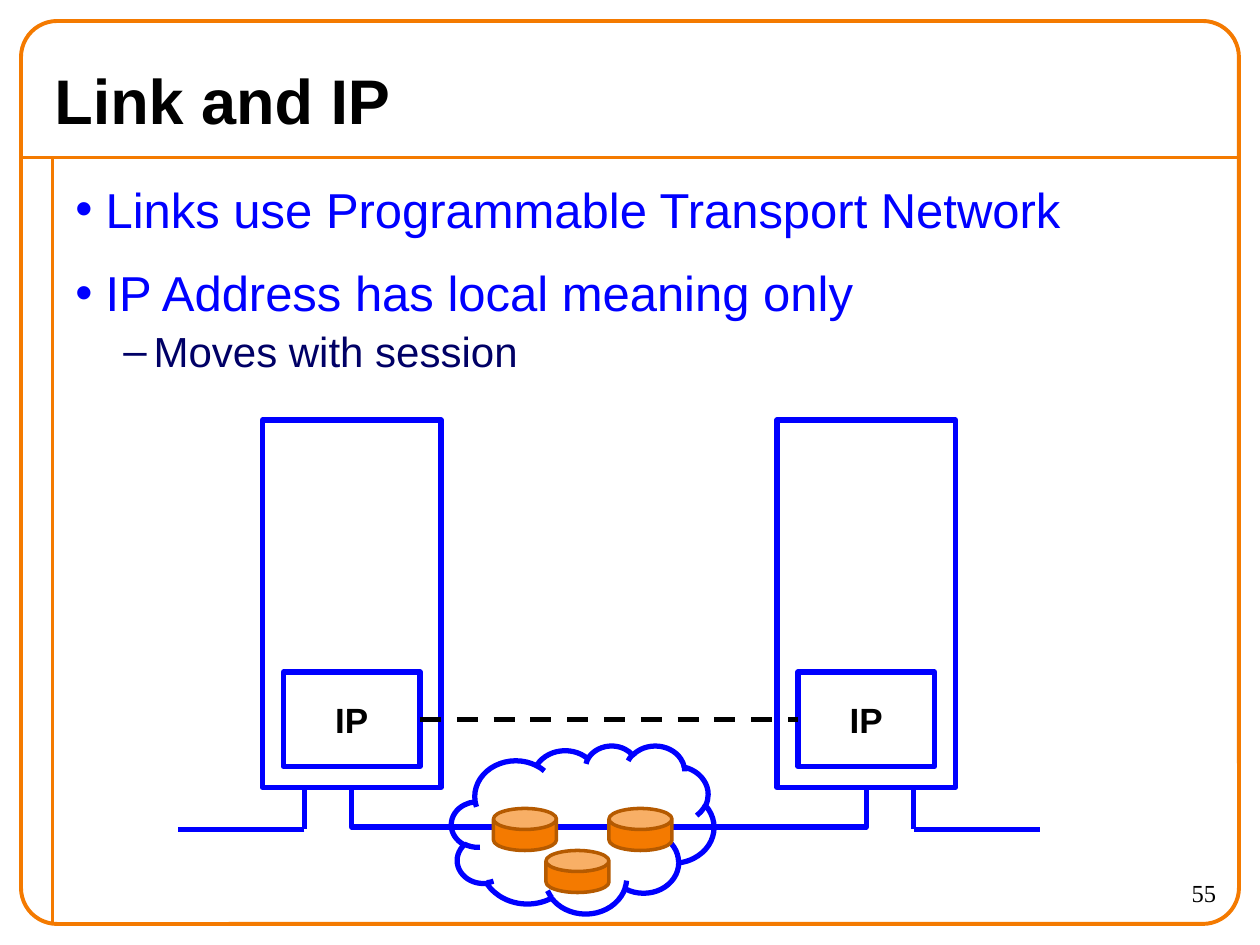
import dataclasses
import typing

import lxml.etree
import pptx
import pptx.dml.color
import pptx.enum.dml
import pptx.enum.shapes
import pptx.enum.text
import pptx.oxml.ns
import pptx.util

HUES = {
    "frame": "F47A00",
    "rim": "B55A00",
    "blue": "0000FF",
    "navy": "000066",
    "black": "000000",
}
COLS, ROWS = 120, 90
KINDS = pptx.enum.shapes.MSO_SHAPE
LINKS = pptx.enum.shapes.MSO_CONNECTOR
ALIGN = pptx.enum.text.PP_ALIGN
ANCHOR = pptx.enum.text.MSO_ANCHOR

deck = pptx.Presentation()
deck.slide_width = pptx.util.Inches(10)
deck.slide_height = pptx.util.Inches(7.5)
slide = deck.slides.add_slide(deck.slide_layouts[6])


@dataclasses.dataclass
class Box:
    col: float
    row: float
    wide: float
    high: float


@dataclasses.dataclass
class Font:
    size: float
    hue: str
    name: str = "Arial"
    bold: bool = False


@dataclasses.dataclass
class Point:
    text: str
    mark: str
    left: float
    gap: float
    level: int
    font: Font


def cell(col: float, row: float) -> tuple[int, int]:
    return int(deck.slide_width * col / COLS), int(deck.slide_height * row / ROWS)


def paint(hue: str) -> pptx.dml.color.RGBColor:
    return pptx.dml.color.RGBColor.from_string(HUES[hue])


def tag(home: typing.Any, label: str, attrs: dict[str, str]) -> typing.Any:
    return lxml.etree.SubElement(home, pptx.oxml.ns.qn(label), attrs)


def style(para: typing.Any, font: Font) -> None:
    for run in para.runs:
        run.font.size = pptx.util.Pt(font.size)
        run.font.name = font.name
        run.font.bold = font.bold
        run.font.color.rgb = paint(font.hue)


def shape(kind: typing.Any, box: Box, hue: str, width: float,
          fill: str = "", adjust: float | None = None) -> typing.Any:
    item = slide.shapes.add_shape(
        kind, *cell(box.col, box.row), *cell(box.wide, box.high))
    item.shadow.inherit = False
    item.line.color.rgb = paint(hue)
    item.line.width = pptx.util.Pt(width)
    if fill:
        item.fill.solid()
        item.fill.fore_color.rgb = paint(fill)
    else:
        item.fill.background()
    if adjust is not None:
        item.adjustments[0] = adjust
    return item


def line(start: tuple[float, float], end: tuple[float, float], hue: str,
         width: float = 3, kind: typing.Any = LINKS.STRAIGHT) -> typing.Any:
    item = slide.shapes.add_connector(kind, *cell(*start), *cell(*end))
    item.line.color.rgb = paint(hue)
    item.line.width = pptx.util.Pt(width)
    tag(item.element.spPr, "a:effectLst", {})
    return item


def elbow(left: float, right: float, row: float, drop: float) -> None:
    thin = 0.02
    mid, half = (left + right) / 2, (right - left) / 2
    item = line((mid + thin / 2, row - half), (mid - thin / 2, row + half),
                "blue", kind=LINKS.ELBOW)
    props = item.element.spPr
    props.find(pptx.oxml.ns.qn("a:xfrm")).set("rot", str(270 * 60000))
    form = props.find(pptx.oxml.ns.qn("a:prstGeom"))
    guides = form.find(pptx.oxml.ns.qn("a:avLst"))
    tag(guides, "a:gd", {"name": "adj1", "fmla": f"val {round(drop / thin * 100000)}"})


def frame(box: Box) -> typing.Any:
    item = slide.shapes.add_textbox(
        *cell(box.col, box.row), *cell(box.wide, box.high))
    item.text_frame.word_wrap = True
    return item.text_frame


def label(text: str, box: Box, font: Font, align: typing.Any,
          anchor: typing.Any = ANCHOR.TOP) -> None:
    body = frame(box)
    body.text = text
    body.vertical_anchor = anchor
    body.paragraphs[0].alignment = align
    style(body.paragraphs[0], font)


def bullets(points: list[Point], box: Box) -> None:
    body = frame(box)
    for rank, point in enumerate(points):
        para = body.paragraphs[0] if rank == 0 else body.add_paragraph()
        para.text = point.text
        para.level = point.level
        para.space_before = pptx.util.Pt(point.gap if rank else 0)
        props = para._p.get_or_add_pPr()
        props.set("marL", str(int(pptx.util.Inches(point.left))))
        props.set("indent", str(int(pptx.util.Inches(-0.24))))
        tag(props, "a:buFont", {"typeface": "Arial"})
        tag(props, "a:buChar", {"char": point.mark})
        style(para, point.font)


def host(left: float, leg: float, far: float) -> None:
    port = shape(KINDS.RECTANGLE, Box(left + 2, 64, 13, 9), "blue", 3)
    body = port.text_frame
    body.word_wrap = False
    body.text = "IP"
    body.vertical_anchor = ANCHOR.MIDDLE
    body.paragraphs[0].alignment = ALIGN.CENTER
    style(body.paragraphs[0], Font(20, "black", bold=True))
    shape(KINDS.RECTANGLE, Box(left, 40, 17, 35), "blue", 3)
    line((leg, 75), (leg, 79), "blue")
    line((leg, 79), (far, 79), "blue")


def main() -> None:
    line((2, 15), (118, 15), "frame", 2.25)
    line((5, 15), (5, 88), "frame", 2.25)
    shape(KINDS.ROUNDED_RECTANGLE, Box(2, 2, 116, 86), "frame", 2.25, adjust=0.04)

    label("Link and IP", Box(4, 5, 106, 9), Font(36, "black", bold=True),
          ALIGN.LEFT, ANCHOR.MIDDLE)
    large, small = Font(28, "blue"), Font(24, "navy")
    bullets([
        Point("Links use Programmable Transport Network", "•", 0.24, 14, 0, large),
        Point("IP Address has local meaning only", "•", 0.24, 14, 0, large),
        Point("Moves with session", "–", 0.62, 2.4, 1, small),
    ], Box(6, 16.5, 111, 71.5))
    label("55", Box(105, 83, 12, 5), Font(14, "black", "Times New Roman"), ALIGN.RIGHT)

    host(25, 29, 17)
    host(74, 87, 99)
    elbow(33.5, 82.5, 75, 4)
    dash = line((40, 68.5), (76, 68.5), "black")
    dash.line.dash_style = pptx.enum.dml.MSO_LINE.DASH

    shape(KINDS.CLOUD, Box(43, 71, 25, 16), "blue", 3)
    for col, row in ((47, 77), (52, 81), (58, 77)):
        shape(KINDS.CAN, Box(col, row, 6, 4), "rim", 2, "frame", 0.59)

    deck.save("out.pptx")


if __name__ == "__main__":
    main()
